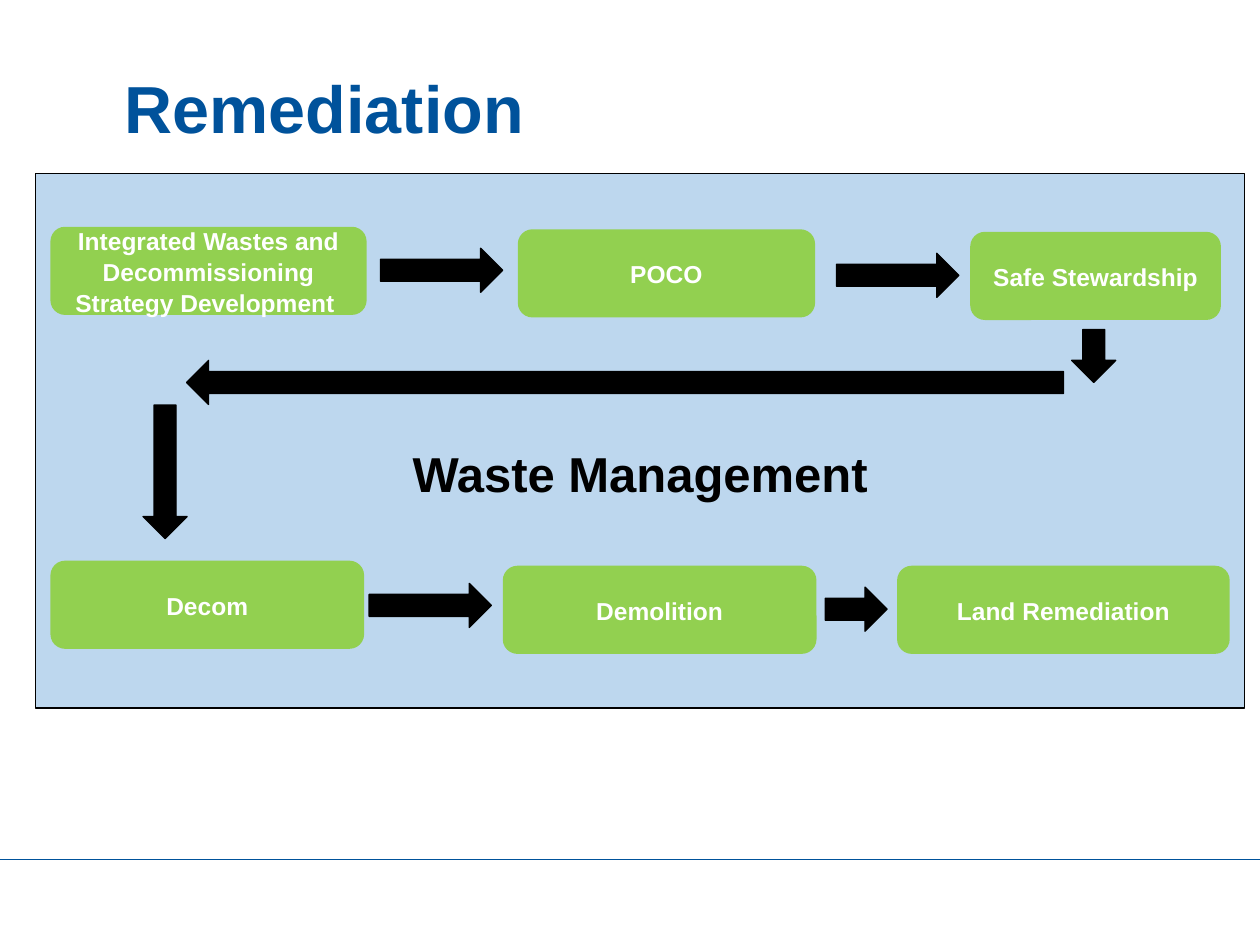
from typing import NamedTuple

from pptx import Presentation, util as u
from pptx.dml import color
from pptx.enum import shapes, text
from pptx.oxml import ns

COLS, ROWS = 100, 75
FONT = "Arial"
HUES = {"navy": "00529B", "sky": "BDD7EE", "lime": "92D050",
        "ink": "000000", "white": "FFFFFF"}


class Step(NamedTuple):
    label: str
    col: float
    row: float
    wide: float


class Arrow(NamedTuple):
    col: float
    row: float
    size: float
    turn: int = 0


STEP_TALL, ARROW_TALL = 7, 3.5

STEPS = [
    Step("Integrated Wastes and Decommissioning Strategy Development ", 4, 18, 25.1),
    Step("POCO", 41.1, 18.2, 23.6),
    Step("Safe Stewardship", 77, 18.4, 19.9),
    Step("Decom", 4, 44.5, 24.9),
    Step("Demolition", 39.9, 44.9, 24.9),
    Step("Land Remediation", 71.2, 44.9, 26.4),
]

# Each arrow is placed before its turn about the centre
ARROWS = [
    Arrow(30.2, 19.7, 9.7),
    Arrow(66.4, 20.1, 9.7),
    Arrow(84.7, 26.5, 4.2, 90),
    Arrow(14.8, 28.6, 69.6, 180),
    Arrow(7.8, 35.7, 10.6, 90),
    Arrow(29.3, 46.3, 9.7),
    Arrow(65.5, 46.6, 4.9),
]

deck = Presentation()
deck.slide_width, deck.slide_height = u.Inches(10), u.Inches(7.5)
slide = deck.slides.add_slide(deck.slide_layouts[5])


def across(cols: float) -> int:
    return round(deck.slide_width * cols / COLS)


def down(rows: float) -> int:
    return round(deck.slide_height * rows / ROWS)


def tint(hue: str) -> color.RGBColor:
    return color.RGBColor.from_string(HUES[hue])


def draw(kind, col: float, row: float, wide: float, tall: float,
         fill: str, edge: str = ""):
    shape = slide.shapes.add_shape(
        kind, across(col), down(row), across(wide), down(tall))
    shape.shadow.inherit = False
    shape.fill.solid()
    shape.fill.fore_color.rgb = tint(fill)
    if edge:
        shape.line.color.rgb = tint(edge)
        shape.line.width = u.Pt(0.75)
    else:
        shape.line.fill.background()
    return shape


def write(shape, words: str, size: float, hue: str,
          align=text.PP_ALIGN.CENTER, space: float = 1.0) -> None:
    frame = shape.text_frame
    frame.text = words
    frame.word_wrap = True
    frame.vertical_anchor = text.MSO_ANCHOR.MIDDLE
    para = frame.paragraphs[0]
    para.alignment, para.line_spacing = align, space
    font = para.runs[0].font
    font.name, font.size, font.bold = FONT, u.Pt(size), True
    font.color.rgb = tint(hue)


def add_step(step: Step) -> None:
    box = draw(shapes.MSO_SHAPE.ROUNDED_RECTANGLE, step.col, step.row,
               step.wide, STEP_TALL, "lime")
    write(box, step.label, 14, "white", space=1.05)


def add_arrow(arrow: Arrow) -> None:
    shape = draw(shapes.MSO_SHAPE.RIGHT_ARROW, arrow.col, arrow.row,
                 arrow.size, ARROW_TALL, "ink", "ink")
    shape.rotation = arrow.turn


# Footer rule
rule = slide.shapes.add_connector(
    shapes.MSO_CONNECTOR.STRAIGHT, 0, down(68.2), across(COLS), down(68.2))
rule.line.color.rgb = tint("navy")
rule.line.width = u.Pt(0.7)
props = rule._element.spPr
props.append(props.makeelement(ns.qn("a:effectLst"), {}))

# Panel, its caption a little below the middle
panel = draw(shapes.MSO_SHAPE.RECTANGLE, 2.8, 13.8, 96, 42.4, "sky", "ink")
write(panel, "Waste Management", 28, "ink")
panel.text_frame.margin_top = down(5.5)

# Title
title = slide.shapes.title
title.left, title.top = across(8.9), down(5)
title.width, title.height = across(85), down(7.7)
write(title, "Remediation", 38, "navy", text.PP_ALIGN.LEFT, 0.9)

# Process steps and the flow between them
for step in STEPS:
    add_step(step)
for arrow in ARROWS:
    add_arrow(arrow)

deck.save("out.pptx")
